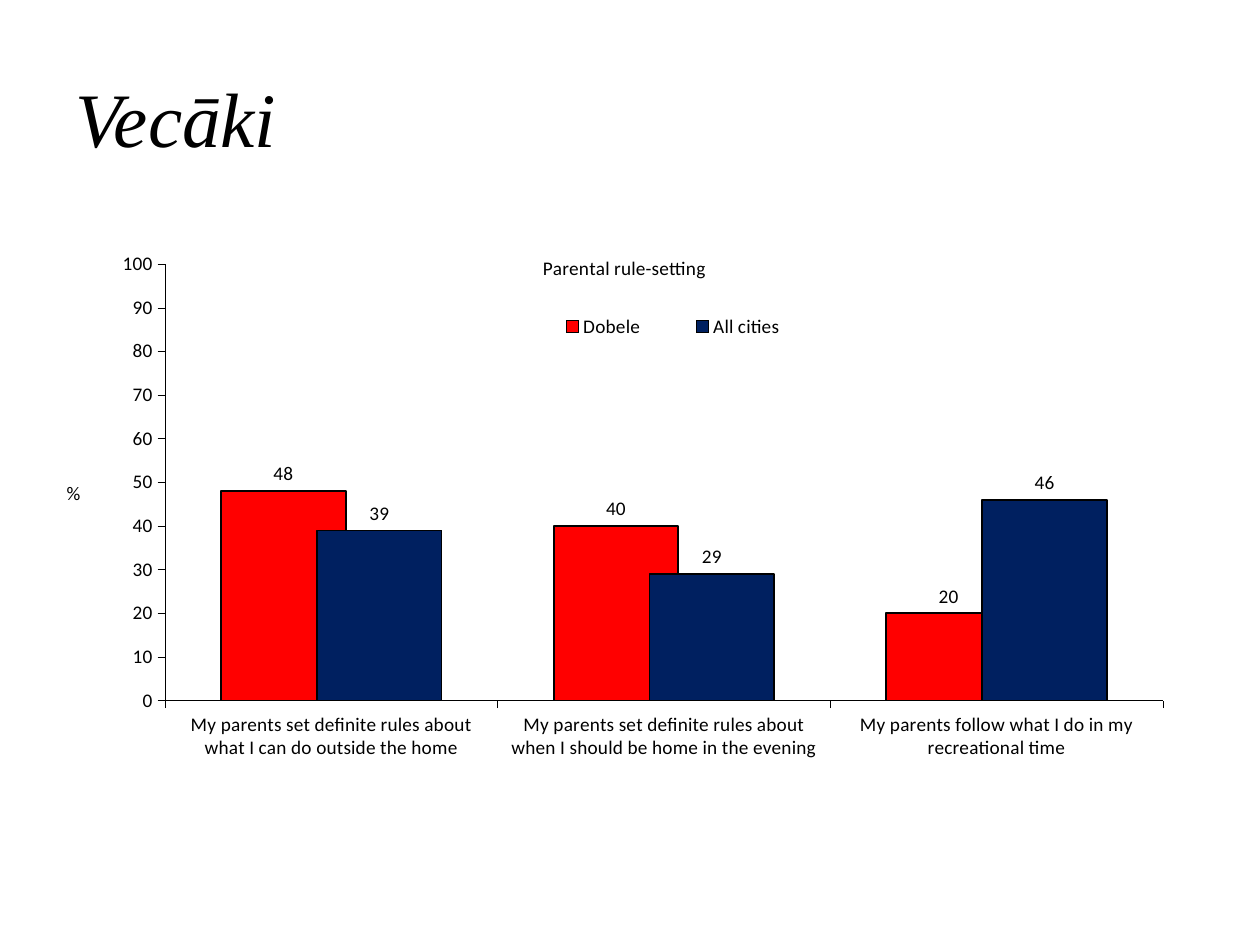
from pptx import Presentation, util as u
from pptx.chart.data import CategoryChartData
from pptx.dml.color import RGBColor
from pptx.enum import chart as ch, text
from pptx.oxml import parse_xml
from pptx.oxml.ns import nsdecls, qn

BLACK = RGBColor(0x00, 0x00, 0x00)
RED = RGBColor(0xFF, 0x00, 0x00)
NAVY = RGBColor(0x00, 0x20, 0x60)

RULES = [
    "My parents set definite rules about what I can do outside the home",
    "My parents set definite rules about when I should be home in the evening",
    "My parents follow what I do in my recreational time",
]
ANSWERS = [
    ("Dobele", (48, 40, 20), RED),
    ("All cities ", (39, 29, 46), NAVY),
]


def place(element, index, x, y, w=None, h=None, inner=False):
    """Give a chart part a manual layout, in fractions of the chart."""
    for old in element.findall(qn("c:layout")):
        element.remove(old)
    sizes = [("x", x), ("y", y), ("w", w), ("h", h)]
    target = '<c:layoutTarget val="inner"/>' if inner else ""
    modes = '<c:xMode val="edge"/><c:yMode val="edge"/>'
    values = "".join(f'<c:{k} val="{v}"/>' for k, v in sizes if v is not None)
    element.insert(index, parse_xml(
        f'<c:layout {nsdecls("c")}><c:manualLayout>{target}{modes}{values}'
        "</c:manualLayout></c:layout>"))


class SlideBuilder:
    heading_font = "Times New Roman"
    chart_font = "Calibri"
    chart_size = u.Pt(11)

    def __init__(self, slide):
        self.slide = slide

    def set_font(self, font, name, size):
        font.name, font.size = name, size
        font.color.rgb = BLACK

    def heading(self, wording, left, top, width, height):
        box = self.slide.shapes.add_textbox(left, top, width, height)
        frame = box.text_frame
        frame.word_wrap = True
        frame.vertical_anchor = text.MSO_ANCHOR.MIDDLE
        run = frame.paragraphs[0].add_run()
        run.text = wording
        self.set_font(run.font, self.heading_font, u.Pt(44))
        run.font.italic = True

    def chart_title(self, title, wording, x, y):
        run = title.text_frame.paragraphs[0].add_run()
        run.text = wording
        self.set_font(run.font, self.chart_font, self.chart_size)
        run.font.bold = False
        place(title._element, 1, x, y)

    def style_axis(self, axis):
        axis.has_major_gridlines = False
        axis.major_tick_mark = ch.XL_TICK_MARK.OUTSIDE
        axis.minor_tick_mark = ch.XL_TICK_MARK.NONE
        axis.format.line.color.rgb = BLACK
        axis.format.line.width = u.Pt(0.25)

    def style_bars(self, series, color):
        series.format.fill.solid()
        series.format.fill.fore_color.rgb = color
        series.format.line.color.rgb = BLACK
        series.format.line.width = u.Pt(1)
        labels = series.data_labels
        labels.show_value = True
        labels.number_format = "0"
        labels.number_format_is_linked = False
        labels.position = ch.XL_LABEL_POSITION.OUTSIDE_END

    def column_chart(self, left, top, width, height):
        data = CategoryChartData(number_format="0")
        data.categories = RULES
        for city, shares, _ in ANSWERS:
            data.add_series(city, shares)
        chart = self.slide.shapes.add_chart(
            ch.XL_CHART_TYPE.COLUMN_CLUSTERED, left, top, width, height, data).chart
        self.set_font(chart.font, self.chart_font, self.chart_size)
        self.chart_title(chart.chart_title, "Parental rule-setting", 0.42, 0.05)

        share_axis = chart.value_axis
        for axis in (chart.category_axis, share_axis):
            self.style_axis(axis)
        share_axis.minimum_scale, share_axis.maximum_scale = 0, 100
        share_axis.major_unit = 10
        share_axis.tick_labels.number_format = "0"
        share_axis.tick_labels.number_format_is_linked = False
        self.chart_title(share_axis.axis_title, "%", 0, 0.41)
        share_axis.axis_title.text_frame._txBody.bodyPr.set("rot", "0")

        chart.has_legend = True
        chart.legend.position = ch.XL_LEGEND_POSITION.RIGHT
        chart.legend.include_in_layout = False
        place(chart.legend._element, 1, 0.4, 0.14, 0.28, 0.06)

        plot = chart.plots[0]
        plot.vary_by_categories = False
        plot.gap_width, plot.overlap = 90, 23
        for series, (_, _, color) in zip(plot.series, ANSWERS):
            self.style_bars(series, color)
        plot_area = chart._chartSpace.chart.plotArea
        place(plot_area, 0, 0.09, 0.07, 0.88, 0.7, inner=True)


def main():
    deck = Presentation()
    deck.slide_width, deck.slide_height = u.Inches(10), u.Inches(7.5)
    builder = SlideBuilder(deck.slides.add_slide(deck.slide_layouts[6]))
    left, width = u.Inches(0.5), u.Inches(9)
    builder.heading("Vecāki", left, u.Inches(0.3), width, u.Inches(1.25))
    builder.column_chart(left, u.Inches(1.75), width, u.Inches(4.95))
    deck.save("out.pptx")


if __name__ == "__main__":
    main()
